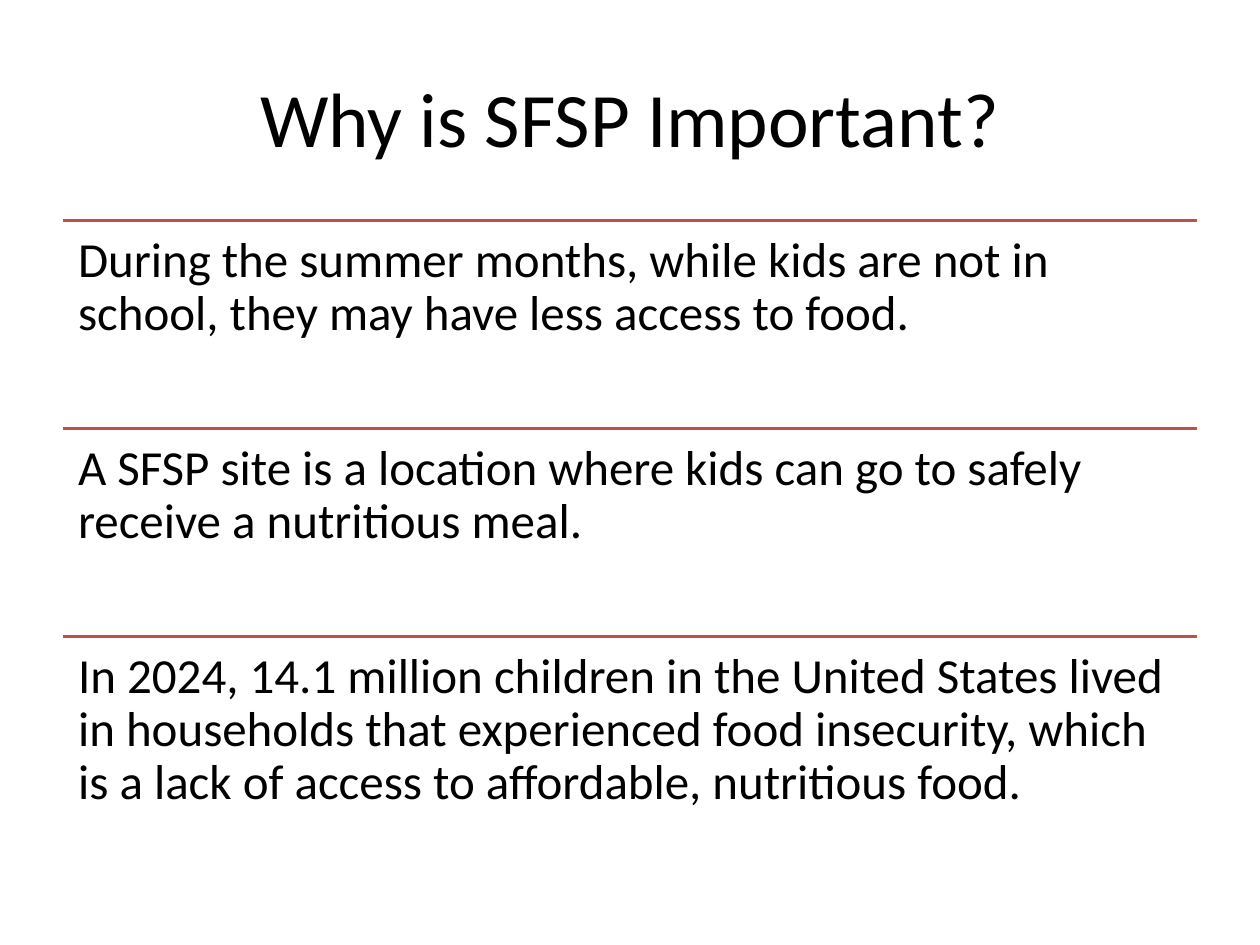
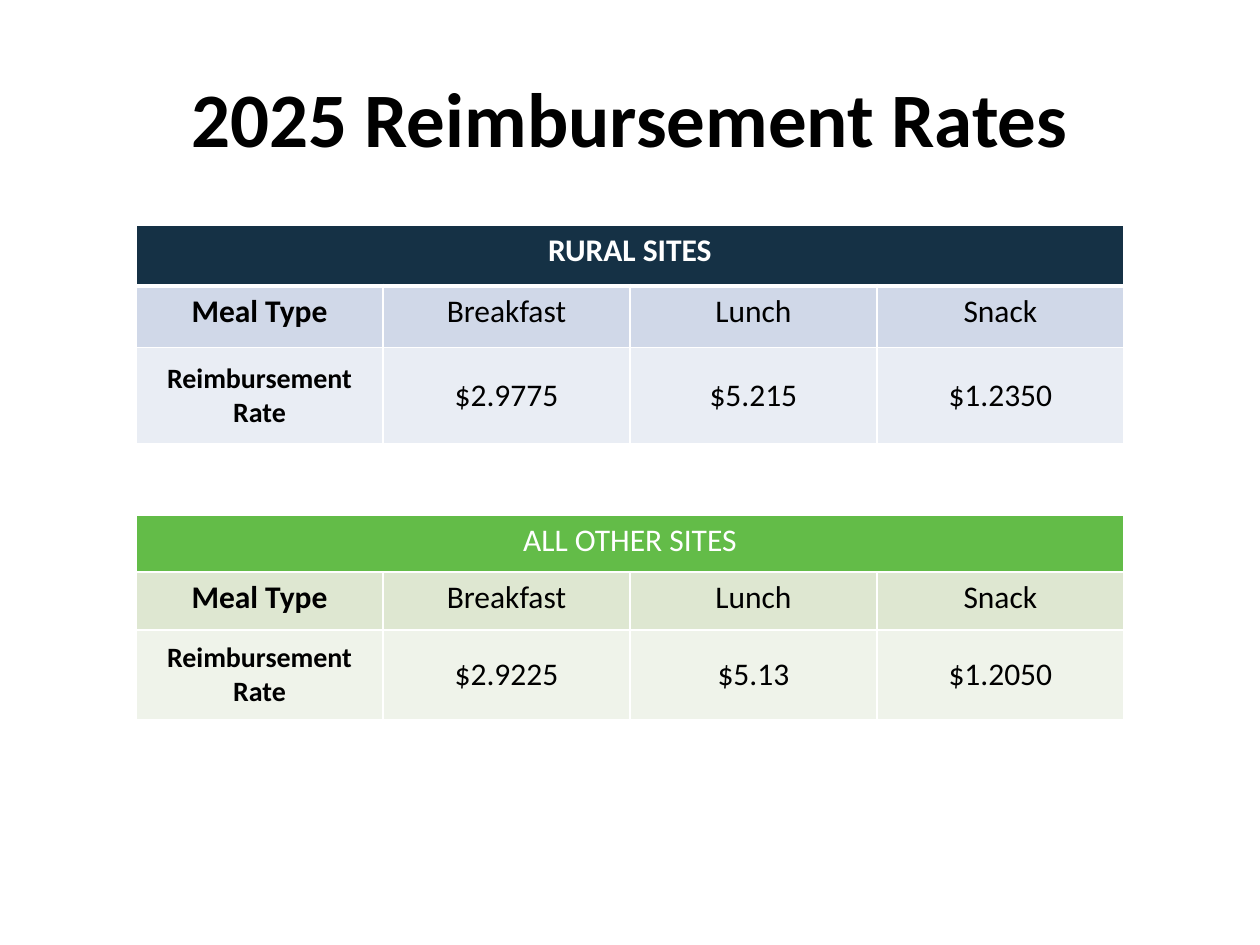
from dataclasses import dataclass

from lxml import etree
from pptx import Presentation
from pptx.dml.color import RGBColor
from pptx.enum.shapes import MSO_CONNECTOR
from pptx.enum.text import MSO_ANCHOR, PP_ALIGN
from pptx.oxml.ns import qn
from pptx.util import Pt

CENTER, LEFT = PP_ALIGN.CENTER, PP_ALIGN.LEFT
TOP, MIDDLE = MSO_ANCHOR.TOP, MSO_ANCHOR.MIDDLE
STRAIGHT = MSO_CONNECTOR.STRAIGHT
PX = 9144


@dataclass(frozen=True)
class Theme:
    font: str = "Calibri"
    text: str = "000000"
    white: str = "FFFFFF"
    rule: str = "C0504D"
    title_size: int = 44
    statement_size: int = 28
    cell_size: int = 18
    label_size: int = 16
    rule_width: int = 2
    border_width: int = 1


THEME = Theme()

REASONS_TITLE = "Why is SFSP Important?"
REASONS = [
    "During the summer months, while kids are not in school, they may have less access to food.",
    "A SFSP site is a location where kids can go to safely receive a nutritious meal.",
    "In 2024, 14.1 million children in the United States lived in households that experienced "
    "food insecurity, which is a lack of access to affordable, nutritious food.",
]

RATES_TITLE = "2025 Reimbursement Rates"
MEALS = ["Meal Type", "Breakfast", "Lunch", "Snack"]
RATE_LABEL = "Reimbursement Rate"
RATE_TABLES = [
    {"heading": "RURAL SITES", "bold": True, "rates": ["$2.9775", "$5.215", "$1.2350"],
     "fills": ["153145", "D0D8E8", "E9EDF4"], "top": 179, "rows": [48, 49, 76],
     "heading_line": 3},
    {"heading": "ALL OTHER SITES", "bold": False, "rates": ["$2.9225", "$5.13", "$1.2050"],
     "fills": ["63BC48", "DEE7D1", "EFF3EA"], "top": 409, "rows": [45, 46, 71],
     "heading_line": 1},
]

SLIDE_W, SLIDE_H = 1000, 750
MARGIN, CONTENT_W = 50, 900
TITLE_TOP, TITLE_H = 30, 125
REASONS_TOP, REASON_H, REASON_INSET = 175, 165, 12
TABLE_LEFT, COLUMN_W = 108, 196


def px(*lengths):
    return [length * PX for length in lengths]


def write(tf, text, size, color=THEME.text, bold=False, align=CENTER):
    tf.text = text
    p = tf.paragraphs[0]
    p.alignment = align
    font = p.runs[0].font
    font.name, font.size, font.bold = THEME.font, Pt(size), bold
    font.color.rgb = RGBColor.from_string(color)
    return p


def add_slide(prs, title, bold=False):
    s = prs.slides.add_slide(prs.slide_layouts[5])
    sp = s.shapes.title
    sp.left, sp.top, sp.width, sp.height = px(MARGIN, TITLE_TOP, CONTENT_W, TITLE_H)
    sp.text_frame.vertical_anchor = MIDDLE
    write(sp.text_frame, title, THEME.title_size, bold=bold)
    return s


def add_rule(s, y):
    line = s.shapes.add_connector(STRAIGHT, *px(MARGIN, y, MARGIN + CONTENT_W, y))
    line.line.color.rgb = RGBColor.from_string(THEME.rule)
    line.line.width = Pt(THEME.rule_width)
    etree.SubElement(line._element.spPr, qn("a:effectLst"))


def add_reason(s, text, y):
    add_rule(s, y)
    tf = s.shapes.add_textbox(*px(MARGIN, y, CONTENT_W, REASON_H)).text_frame
    tf.word_wrap = True
    tf.vertical_anchor = TOP
    tf.margin_left = tf.margin_top = tf.margin_right = tf.margin_bottom = REASON_INSET * PX
    p = write(tf, text, THEME.statement_size, align=LEFT)
    p.line_spacing = 0.9


def set_borders(cell, top, bottom):
    tc_pr = cell._tc.get_or_add_tcPr()
    side = THEME.border_width
    for tag, width in (("lnL", side), ("lnR", side), ("lnT", top), ("lnB", bottom)):
        ln = etree.SubElement(tc_pr, qn(f"a:{tag}"), w=str(Pt(width)))
        fill = etree.SubElement(ln, qn("a:solidFill"))
        etree.SubElement(fill, qn("a:srgbClr"), val=THEME.white)


def add_rate_table(s, spec):
    rows = [[spec["heading"]], MEALS, [RATE_LABEL] + spec["rates"]]
    size = px(TABLE_LEFT, spec["top"], COLUMN_W * len(MEALS), sum(spec["rows"]))
    table = s.shapes.add_table(len(rows), len(MEALS), *size).table
    table.first_row = table.horz_banding = False
    for column in table.columns:
        column.width = COLUMN_W * PX
    for row, height in zip(table.rows, spec["rows"]):
        row.height = height * PX

    lines = [THEME.border_width, spec["heading_line"], THEME.border_width, THEME.border_width]
    for r, fill in enumerate(spec["fills"]):
        for cell in table.rows[r].cells:
            set_borders(cell, lines[r], lines[r + 1])
            cell.fill.solid()
            cell.fill.fore_color.rgb = RGBColor.from_string(fill)
    table.cell(0, 0).merge(table.cell(0, len(MEALS) - 1))

    for r, texts in enumerate(rows):
        for c, text in enumerate(texts):
            cell = table.cell(r, c)
            cell.vertical_anchor = MIDDLE if r == 2 else TOP
            write(cell.text_frame, text,
                  THEME.label_size if text == RATE_LABEL else THEME.cell_size,
                  THEME.white if r == 0 else THEME.text,
                  spec["bold"] if r == 0 else c == 0)


def main():
    prs = Presentation()
    prs.slide_width, prs.slide_height = px(SLIDE_W, SLIDE_H)

    s = add_slide(prs, REASONS_TITLE)
    for i, reason in enumerate(REASONS):
        add_reason(s, reason, REASONS_TOP + i * REASON_H)

    s = add_slide(prs, RATES_TITLE, bold=True)
    for spec in RATE_TABLES:
        add_rate_table(s, spec)

    prs.save("out.pptx")


if __name__ == "__main__":
    main()
